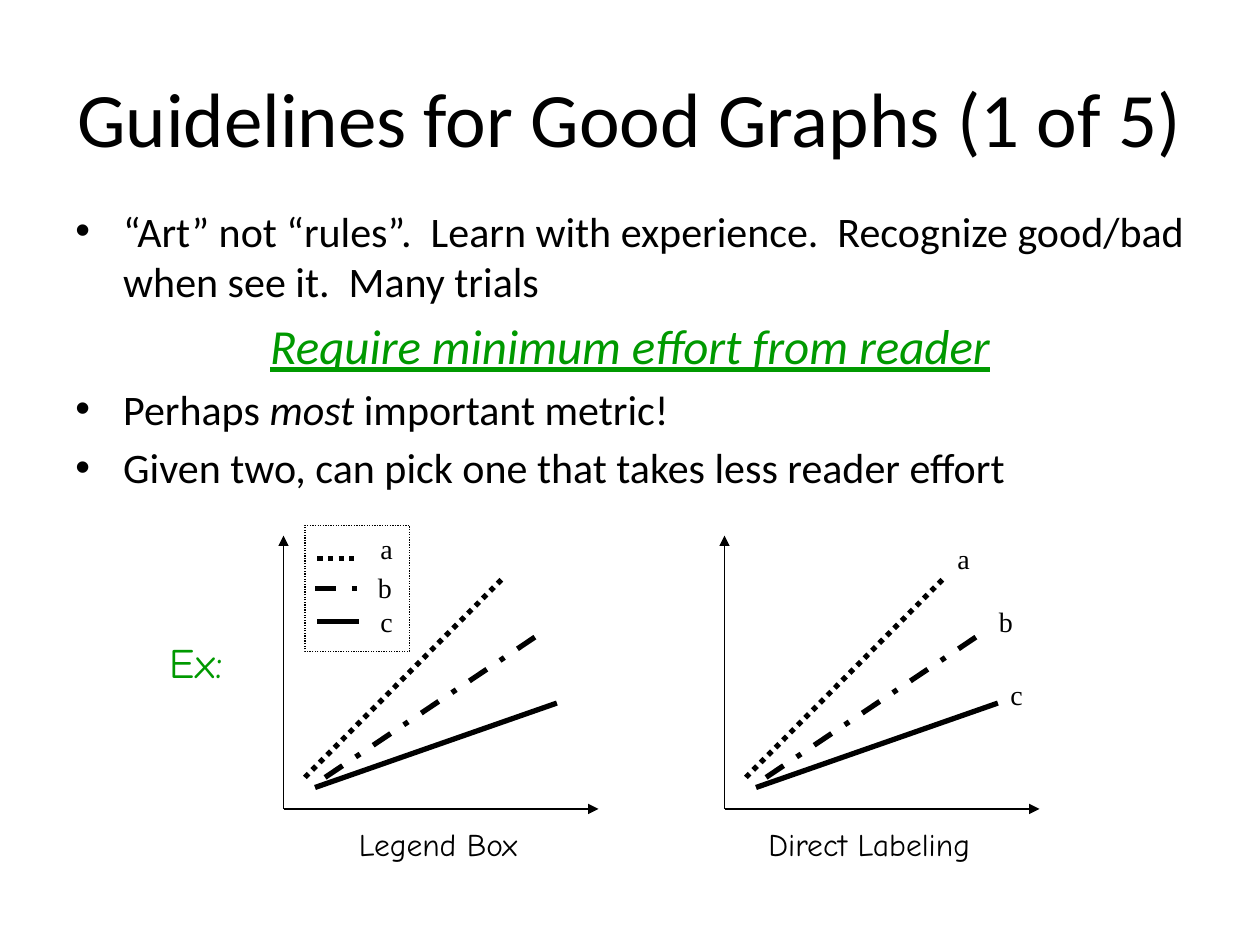
from lxml.etree import SubElement
from pptx import Presentation
from pptx.dml.color import RGBColor
from pptx.enum.dml import MSO_LINE
from pptx.enum.shapes import MSO_CONNECTOR, MSO_SHAPE
from pptx.enum.text import MSO_ANCHOR, MSO_AUTO_SIZE, PP_ALIGN
from pptx.oxml.ns import qn
from pptx.util import Inches, Pt

BLACK, GREEN = "000000", "009900"
SANS, SERIF, COMIC = "Calibri", "Times New Roman", "Comic Neue"
DOTS, DASHES = MSO_LINE.ROUND_DOT, MSO_LINE.DASH_DOT

# Start and end of each series, measured from the plot's left edge
SERIES = [
    (0.17, 6.17, 1.75, 4.58, DOTS),
    (0.25, 6.25, 2.17, 5.58, None),
    (0.33, 6.17, 2.08, 5, DASHES),
]
KEYS = [(2.52, 4.43, DOTS), (2.52, 4.93, None), (2.5, 4.67, DASHES)]


def rgb(color):
    return RGBColor.from_string(color)


def style(font, size, name=SANS, color=BLACK):
    font.size, font.name = Pt(size), name
    font.color.rgb = rgb(color)


def add_box(shapes, left, top, width, height):
    box = shapes.add_textbox(*map(Inches, (left, top, width, height)))
    box.text_frame.word_wrap = True
    return box.text_frame


def add_label(shapes, text, left, top, width, height, size, name, color=BLACK):
    """Add one line of text in a box that fits it."""
    frame = add_box(shapes, left, top, width, height)
    frame.word_wrap = False
    frame.auto_size = MSO_AUTO_SIZE.SHAPE_TO_FIT_TEXT
    frame.text = text
    style(frame.paragraphs[0].runs[0].font, size, name, color)


def add_letter(shapes, text, left, top):
    add_label(shapes, text, left, top, 0.3, 0.37, 16, SERIF)


def add_line(shapes, x1, y1, x2, y2, width=3, dash=None, arrow=False):
    line = shapes.add_connector(
        MSO_CONNECTOR.STRAIGHT, *map(Inches, (x1, y1, x2, y2)))
    line.line.color.rgb = rgb(BLACK)
    line.line.width = Pt(width)
    if dash:
        line.line.dash_style = dash
    if arrow:
        SubElement(line.line._get_or_add_ln(), qn("a:tailEnd"), type="triangle")
    SubElement(line._element.spPr, qn("a:effectLst"))


def add_plot(shapes, left):
    """Draw both axes and the three series."""
    base = 6.42
    add_line(shapes, left, base, left, 4.25, 0.75, arrow=True)
    add_line(shapes, left, base, left + 2.5, base, 0.75, arrow=True)
    for x1, y1, x2, y2, dash in SERIES:
        add_line(shapes, left + x1, y1, left + x2, y2, dash=dash)


def add_legend(shapes):
    for x, y, dash in KEYS:
        add_line(shapes, x, y, x + 0.33, y, dash=dash)
    for text, x, y in [("a", 2.92, 4.17), ("b", 2.9, 4.48), ("c", 2.92, 4.75)]:
        add_letter(shapes, text, x, y)
    frame = shapes.add_shape(
        MSO_SHAPE.RECTANGLE, *map(Inches, (2.42, 4.17, 0.83, 1)))
    frame.shadow.inherit = False
    frame.fill.background()
    frame.line.color.rgb = rgb(BLACK)
    frame.line.width = Pt(0.75)
    frame.line.dash_style = DOTS


def add_title(shapes, text):
    frame = add_box(shapes, 0.5, 0.3, 9, 1.25)
    frame.vertical_anchor = MSO_ANCHOR.MIDDLE
    frame.text = text
    para = frame.paragraphs[0]
    para.alignment = PP_ALIGN.CENTER
    style(para.runs[0].font, 44)


def add_point(frame, parts, size=24, color=BLACK, bullet=True):
    """Add a paragraph; every second part is in italics."""
    first = not frame.text
    para = frame.paragraphs[0] if first else frame.add_paragraph()
    props = para._p.get_or_add_pPr()
    props.set("marL", str(Inches(0.38)))
    props.set("indent", str(Inches(-0.38)))
    if not first:
        para.space_before = Pt(size * 0.2)
    if bullet:
        SubElement(props, qn("a:buFont"), typeface="Arial")
        SubElement(props, qn("a:buChar"), char="•")
    else:
        para.alignment = PP_ALIGN.CENTER
    for i, text in enumerate(parts):
        run = para.add_run()
        run.text = text
        style(run.font, size, color=color)
        run.font.italic = i % 2 == 1
    return para


def add_body(shapes):
    frame = add_box(shapes, 0.5, 1.58, 9, 5.12)
    add_point(frame, ["“Art” not “rules”.  Learn with experience.  "
                      "Recognize good/bad when see it.  Many trials"])
    motto = add_point(frame, ["Require minimum effort from reader"],
                      28, GREEN, bullet=False)
    font = motto.runs[0].font
    font.italic = font.underline = True
    add_point(frame, ["Perhaps ", "most", " important metric!"])
    add_point(frame, ["Given two, can pick one that takes less reader effort"])


def main():
    deck = Presentation()
    deck.slide_width, deck.slide_height = Inches(10), Inches(7.5)
    shapes = deck.slides.add_slide(deck.slide_layouts[6]).shapes

    add_title(shapes, "Guidelines for Good Graphs (1 of 5)")
    add_body(shapes)

    group = shapes.add_group_shape().shapes
    add_plot(group, 2.25)
    add_legend(group)

    add_plot(shapes, 5.75)
    for text, x, y in [("a", 7.5, 4.25), ("b", 7.83, 4.75), ("c", 7.92, 5.33)]:
        add_letter(shapes, text, x, y)

    add_label(shapes, "Legend Box", 2.75, 6.5, 1.53, 0.4, 18, COMIC)
    add_label(shapes, "Direct Labeling", 6, 6.5, 1.98, 0.4, 18, COMIC)
    add_label(shapes, "Ex:", 1.25, 5, 0.7, 0.5, 24, COMIC, GREEN)
    deck.save("out.pptx")


if __name__ == "__main__":
    main()
